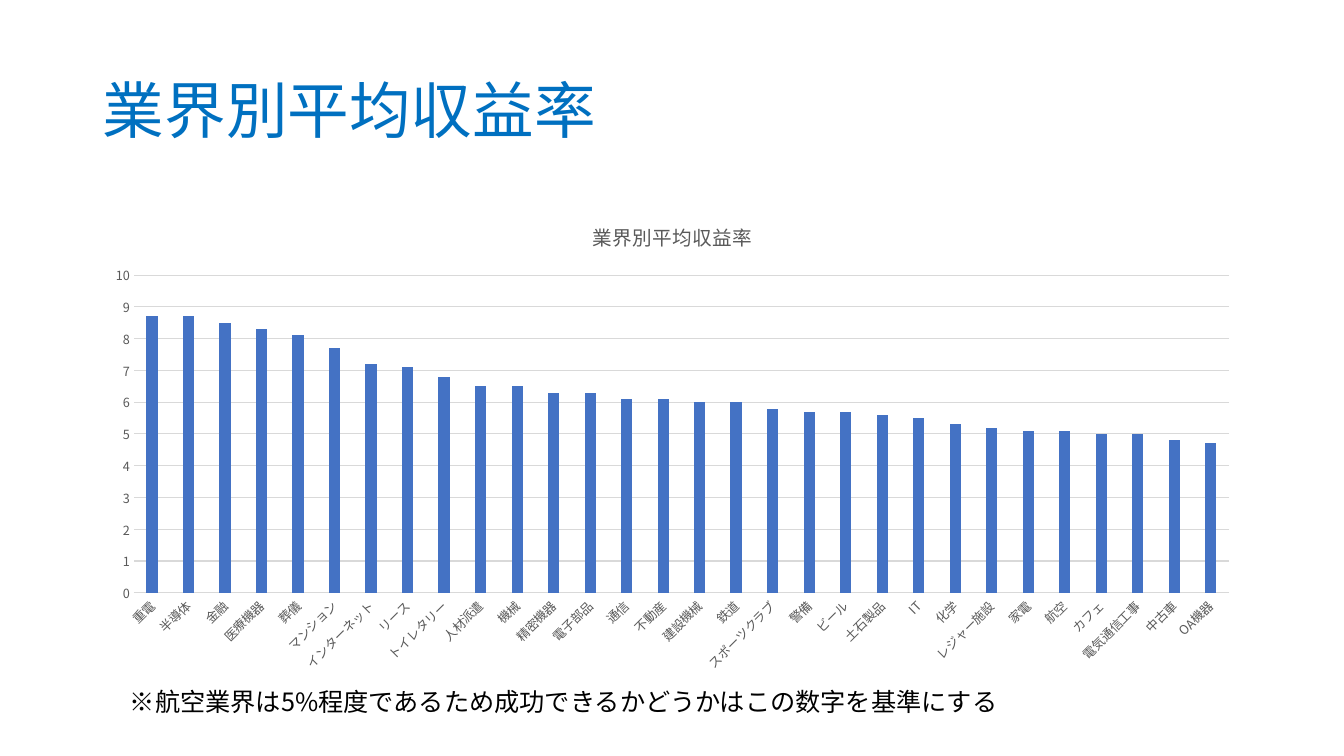
from lxml.etree import SubElement
from pptx import Presentation
from pptx.chart.data import CategoryChartData
from pptx.dml.color import RGBColor
from pptx.enum.chart import XL_CHART_TYPE, XL_TICK_MARK
from pptx.enum.text import MSO_ANCHOR, MSO_AUTO_SIZE, PP_ALIGN
from pptx.oxml.ns import qn
from pptx.util import Inches, Pt

FONT = "Noto Sans CJK JP"
TITLE_BLUE = RGBColor(0x00, 0x70, 0xC0)
BAR_BLUE = RGBColor(0x44, 0x72, 0xC4)
LABEL_GRAY = RGBColor(0x59, 0x59, 0x59)
GRID_GRAY = RGBColor(0xD9, 0xD9, 0xD9)
BLACK = RGBColor(0x00, 0x00, 0x00)

HEADING = "業界別平均収益率"
NOTE = "※航空業界は5%程度であるため成功できるかどうかはこの数字を基準にする"
RETURNS = {
    "重電": 8.7, "半導体": 8.7, "金融": 8.5, "医療機器": 8.3, "葬儀": 8.1,
    "マンション": 7.7, "インターネット": 7.2, "リース": 7.1, "トイレタリー": 6.8,
    "人材派遣": 6.5, "機械": 6.5, "精密機器": 6.3, "電子部品": 6.3, "通信": 6.1,
    "不動産": 6.1, "建設機械": 6, "鉄道": 6, "スポーツクラブ": 5.8, "警備": 5.7,
    "ビール": 5.7, "土石製品": 5.6, "IT": 5.5, "化学": 5.3, "レジャー施設": 5.2,
    "家電": 5.1, "航空": 5.1, "カフェ": 5, "電気通信工事": 5, "中古車": 4.8,
    "OA機器": 4.7,
}


class SlideBuilder:
    def __init__(self, slide, font_name):
        self.slide = slide
        self.font_name = font_name

    def style(self, font, size, color):
        font.size = Pt(size)
        font.color.rgb = color
        font.name = self.font_name

    def fill_text(self, frame, text, size, color):
        """Set the text and style it for Latin and East Asian letters alike."""
        frame.text = text
        paragraph = frame.paragraphs[0]
        paragraph.alignment = PP_ALIGN.LEFT
        self.style(paragraph.font, size, color)
        properties = paragraph._p.pPr.find(qn("a:defRPr"))
        SubElement(properties, qn("a:ea"), typeface=self.font_name)
        return paragraph

    def title(self, text, left, top, width, height):
        title = self.slide.shapes.title
        title.left, title.top = Inches(left), Inches(top)
        title.width, title.height = Inches(width), Inches(height)
        title.text_frame.vertical_anchor = MSO_ANCHOR.MIDDLE
        self.fill_text(title.text_frame, text, 44, TITLE_BLUE).line_spacing = 0.9

    def note(self, text, left, top, width, height):
        note = self.slide.shapes.add_textbox(
            Inches(left), Inches(top), Inches(width), Inches(height))
        note.text_frame.word_wrap = True
        note.text_frame.auto_size = MSO_AUTO_SIZE.SHAPE_TO_FIT_TEXT
        self.fill_text(note.text_frame, text, 18, BLACK)

    def column_chart(self, heading, values, left, top, width, height):
        data = CategoryChartData()
        data.categories = list(values)
        data.add_series("Series 1", list(values.values()))
        chart = self.slide.shapes.add_chart(
            XL_CHART_TYPE.COLUMN_CLUSTERED, Inches(left), Inches(top),
            Inches(width), Inches(height), data).chart
        self.style(chart.font, 10, BLACK)
        chart.has_legend = False
        chart.has_title = True
        chart.chart_title.include_in_layout = False
        chart_heading = chart.chart_title.text_frame
        chart_heading.text = heading
        self.style(chart_heading.paragraphs[0].font, 14, LABEL_GRAY)
        chart_heading.paragraphs[0].font.bold = False

        columns = chart.plots[0]
        columns.gap_width = 219
        columns.overlap = -27
        columns.vary_by_categories = False
        bars = columns.series[0].format.fill
        bars.solid()
        bars.fore_color.rgb = BAR_BLUE
        self.axes(chart)

    def axes(self, chart):
        industries, rates = chart.category_axis, chart.value_axis
        for axis in (industries, rates):
            axis.major_tick_mark = axis.minor_tick_mark = XL_TICK_MARK.NONE
            self.style(axis.tick_labels.font, 9, LABEL_GRAY)
        rates.minimum_scale, rates.maximum_scale, rates.major_unit = 0, 10, 1
        rates.format.line.fill.background()
        rates.has_major_gridlines = True
        for line in (industries.format.line, rates.major_gridlines.format.line):
            line.color.rgb = GRID_GRAY
            line.width = Pt(0.75)
        label_body = industries._element.find(qn("c:txPr")).find(qn("a:bodyPr"))
        label_body.set("rot", str(-45 * 60000))
        label_body.set("vert", "horz")


def main():
    presentation = Presentation()
    presentation.slide_width = Inches(13.33)
    presentation.slide_height = Inches(7.5)
    title_only = presentation.slide_layouts[5]
    builder = SlideBuilder(presentation.slides.add_slide(title_only), FONT)
    builder.title(HEADING, 0.92, 0.4, 11.5, 1.45)
    builder.column_chart(HEADING, RETURNS, 0.92, 2, 11.5, 4.76)
    builder.note(NOTE, 1.19, 6.76, 8.87, 0.4)
    presentation.save("out.pptx")


if __name__ == "__main__":
    main()
